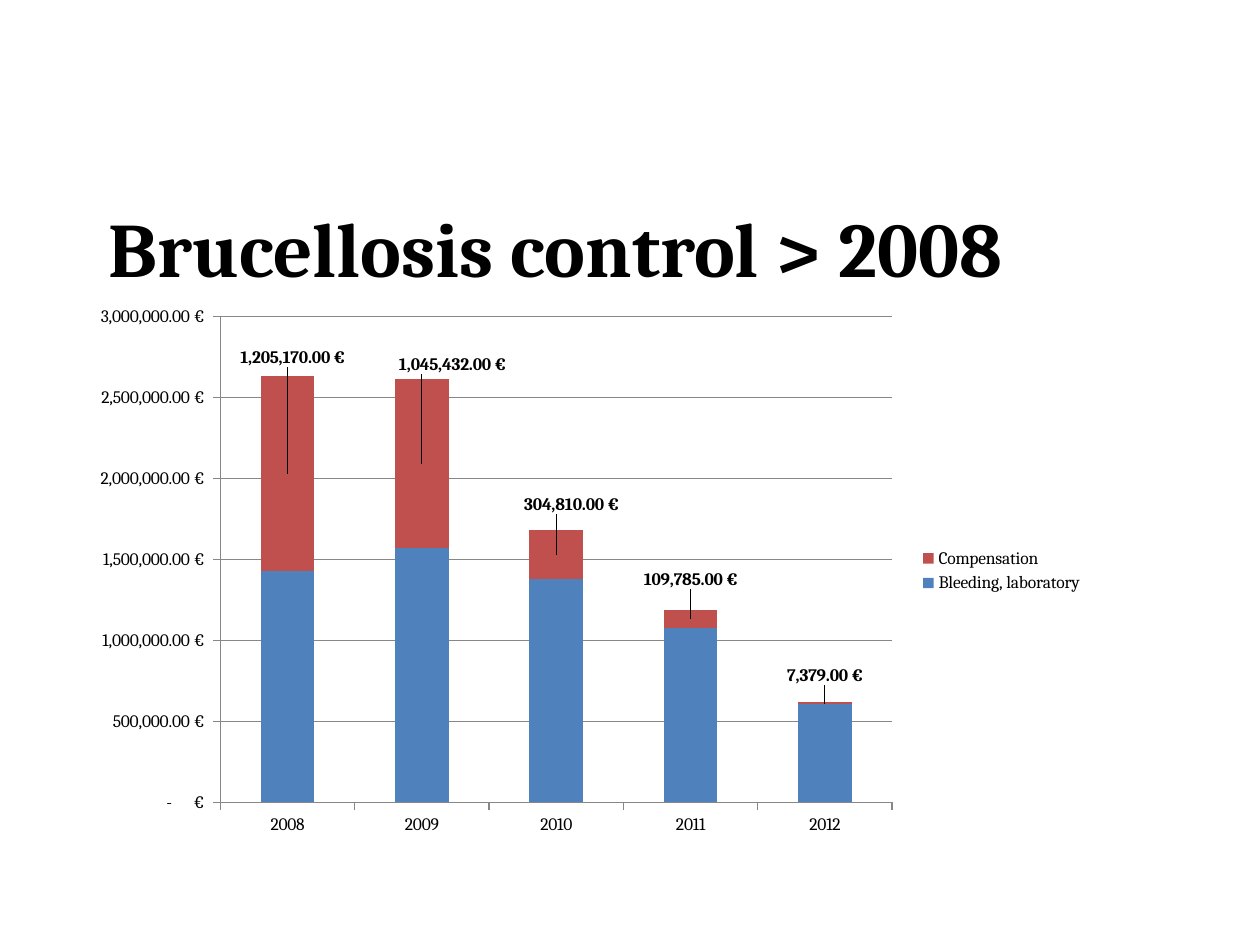
from lxml import etree
from pptx import Presentation
from pptx.chart import data as cd
from pptx.dml.color import RGBColor
from pptx.enum import chart as ch, text
from pptx.oxml import ns
from pptx.util import Cm, Pt

COLORS = {"ink": "000000", "axis": "878787", "bleeding": "4F81BD", "compensation": "C0504D"}
FONT = "Cambria"
EURO = r'_-* #,##0.00\ [$€-1]_-;\-* #,##0.00\ [$€-1]_-;_-* "-"??\ [$€-1]_-'
YEARS = ["2008", "2009", "2010", "2011", "2012"]
COSTS = [
    ("Bleeding, laboratory", "bleeding", [1430000, 1570000, 1380000, 1080000, 610000]),
    ("Compensation", "compensation", [1205170, 1045432, 304810, 109785, 7379]),
]
LABEL_SHIFTS = [(0.005, -0.21), (0.03, -0.18), (0.015, -0.09), (0, -0.07), (0, -0.05)]


def rgb(name):
    """Return a named colour."""
    return RGBColor.from_string(COLORS[name])


def set_font(font, size, bold=False):
    """Apply the slide's typeface in a given size and weight."""
    for key, value in {"name": FONT, "size": Pt(size), "bold": bold}.items():
        setattr(font, key, value)
    font.color.rgb = rgb("ink")


def add_layout(parent, index, **values):
    """Insert a manual chart layout into a chart element."""
    layout = etree.Element(ns.qn("c:layout"))
    manual = etree.SubElement(layout, ns.qn("c:manualLayout"))
    for key, value in values.items():
        etree.SubElement(manual, ns.qn(f"c:{key}")).set("val", str(value))
    parent.insert(index, layout)


def add_title(s, left, top, width, height):
    """Place the centred heading."""
    tf = s.shapes.add_textbox(left, top, width, height).text_frame
    tf.word_wrap = True
    tf.vertical_anchor = text.MSO_ANCHOR.MIDDLE
    p = tf.paragraphs[0]
    p.alignment = text.PP_ALIGN.CENTER
    r = p.add_run()
    r.text = "Brucellosis control > 2008"
    set_font(r.font, 44, True)


def style_axis(axis):
    """Give an axis its grey line and outside ticks."""
    axis.major_tick_mark = ch.XL_TICK_MARK.OUTSIDE
    axis.minor_tick_mark = ch.XL_TICK_MARK.NONE
    axis.format.line.color.rgb = rgb("axis")
    axis.format.line.width = Pt(0.75)


def label_points(series):
    """Show bold values lifted above the stacked columns."""
    labels = series.data_labels
    labels.show_value = True
    labels.number_format = EURO
    labels.number_format_is_linked = False
    set_font(labels.font, 10, True)
    for i in range(len(LABEL_SHIFTS)):
        set_font(series.points[i].data_label.font, 10, True)
    for label, (x, y) in zip(series._element.iter(ns.qn("c:dLbl")), LABEL_SHIFTS):
        add_layout(label, 1, x=x, y=y)
        number = etree.Element(ns.qn("c:numFmt"), formatCode=EURO, sourceLinked="0")
        label.insert(2, number)


def add_cost_chart(s, left, top, width, height):
    """Place the stacked yearly cost chart."""
    data = cd.CategoryChartData(number_format=EURO)
    data.categories = YEARS
    for name, _, values in COSTS:
        data.add_series(name, values)
    chart = s.shapes.add_chart(
        ch.XL_CHART_TYPE.COLUMN_STACKED, left, top, width, height, data).chart
    set_font(chart.font, 10)
    chart.has_title = False
    chart.has_legend = True
    chart.legend.position = ch.XL_LEGEND_POSITION.RIGHT
    chart.legend.include_in_layout = False
    plot = chart.plots[0]
    for key, value in {"gap_width": 150, "overlap": 100, "vary_by_categories": False}.items():
        setattr(plot, key, value)
    for series, (_, color, _) in zip(plot.series, COSTS):
        series.format.fill.solid()
        series.format.fill.fore_color.rgb = rgb(color)
    label_points(plot.series[1])
    for axis in (chart.category_axis, chart.value_axis):
        style_axis(axis)
    value_axis = chart.value_axis
    for key, value in {"minimum_scale": 0, "maximum_scale": 3000000, "major_unit": 500000,
                       "has_major_gridlines": True}.items():
        setattr(value_axis, key, value)
    value_axis.major_gridlines.format.line.color.rgb = rgb("axis")
    value_axis.major_gridlines.format.line.width = Pt(0.75)
    value_axis.tick_labels.number_format = EURO
    value_axis.tick_labels.number_format_is_linked = False
    area = chart._chartSpace.find(".//" + ns.qn("c:plotArea"))
    for old in area.findall(ns.qn("c:layout")):
        area.remove(old)
    add_layout(area, 0, layoutTarget="inner", xMode="edge", yMode="edge",
               x=0.14, y=0.04, w=0.66, h=0.88)


def main():
    """Build and save the slide."""
    prs = Presentation()
    prs.slide_width, prs.slide_height = Cm(25.4), Cm(19.05)
    s = prs.slides.add_slide(prs.slide_layouts[6])
    add_title(s, Cm(0.79), Cm(4.17), Cm(20.83), Cm(1.6))
    add_cost_chart(s, Cm(1.57), Cm(5.94), Cm(20.52), Cm(11.13))
    prs.save("out.pptx")


if __name__ == "__main__":
    main()
